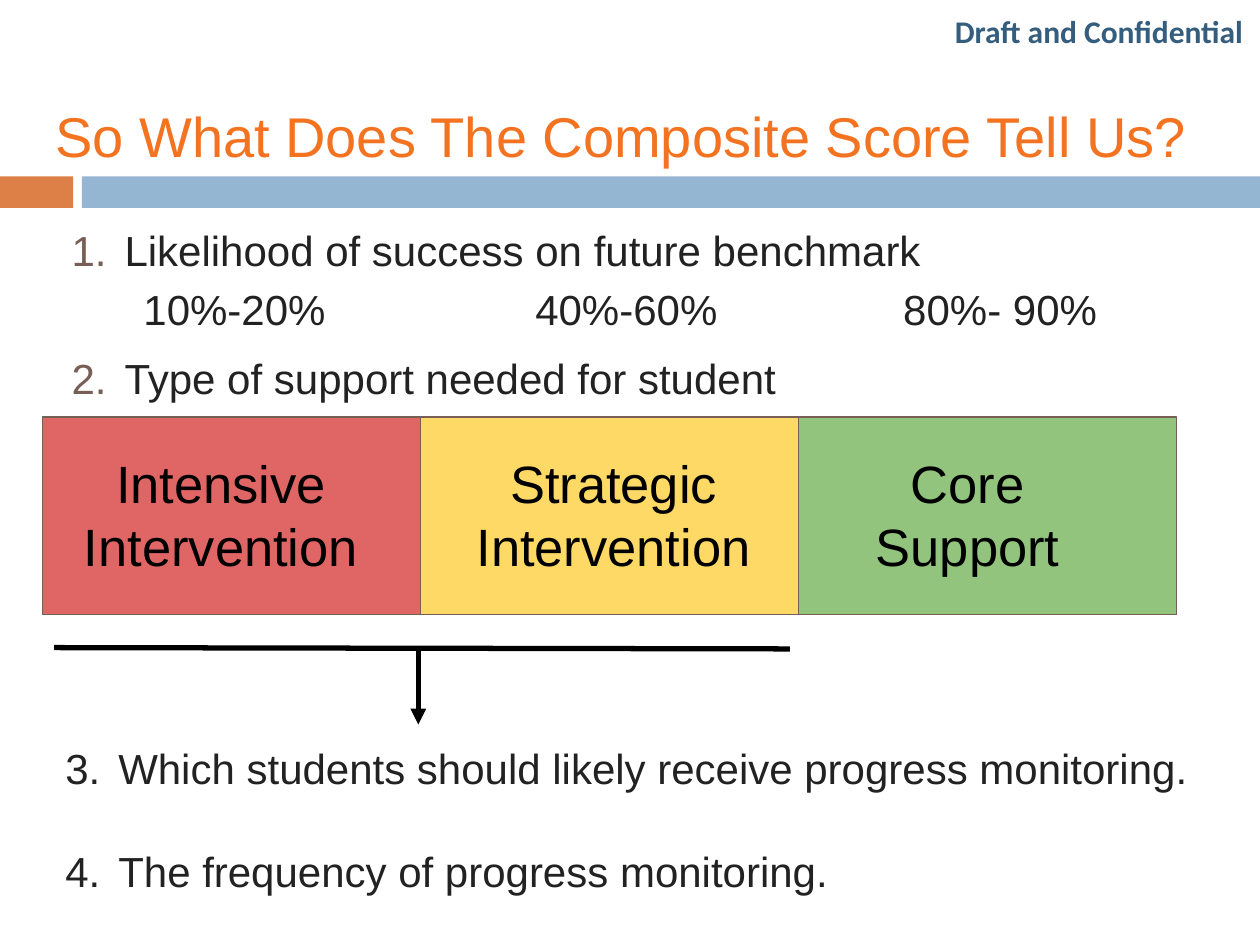
from pptx import Presentation
from pptx.util import Inches, Pt
from pptx.dml.color import RGBColor
from pptx.enum.shapes import MSO_SHAPE, MSO_CONNECTOR
from pptx.enum.text import PP_ALIGN, MSO_ANCHOR
from lxml.etree import SubElement
from pptx.oxml.ns import qn


def hue(code):
    return RGBColor.from_string(code)


def write(box, text, size, color, face="Arial", **form):
    frame = slide.shapes.add_textbox(*map(Inches, box)).text_frame
    frame.word_wrap = True
    for side in ("left", "right", "top", "bottom"):
        setattr(frame, f"margin_{side}", Inches(0.1))
    for row, line in enumerate(text.split("\n")):
        para = frame.paragraphs[0] if row == 0 else frame.add_paragraph()
        run = para.add_run()
        run.text = line
        look = {"name": face, "size": Pt(size), "bold": False}
        for key, value in {**look, **form}.items():
            setattr(run.font, key, value)
        run.font.color.rgb = hue(color)
    return frame


deck = Presentation()
deck.slide_width, deck.slide_height = Inches(10), Inches(7.5)
slide = deck.slides.add_slide(deck.slide_layouts[6])

blocks = [
    (0, 1.4, 0.58, 0.25, "DD8047", None),
    (0.65, 1.4, 9.35, 0.25, "94B6D2", None),
]
for col, fill in enumerate(("E06666", "FFD966", "93C47D")):
    blocks.append((0.34 + col * 3, 3.31, 3, 1.57, fill, "775F55"))
for left, top, width, height, fill, edge in blocks:
    rect = slide.shapes.add_shape(
        MSO_SHAPE.RECTANGLE, Inches(left), Inches(top), Inches(width), Inches(height))
    rect.shadow.inherit = False
    rect.fill.solid()
    rect.fill.fore_color.rgb = hue(fill)
    if edge:
        rect.line.color.rgb = hue(edge)
        rect.line.width = Pt(0.75)
    else:
        rect.line.fill.background()

note = write((7.48, 0.05, 2.52, 0.4), "Draft and Confidential", 18, "355D7E",
             "Calibri", bold=True)
note.word_wrap = False
note.margin_top = note.margin_bottom = Inches(0.05)

title = write((0.34, 0.66, 9.32, 0.83), "So What Does The Composite Score Tell Us?",
              32, "F37321")
title.vertical_anchor = MSO_ANCHOR.MIDDLE

items = [
    (0.39, 1.62, 8.92, "775F55",
     "Likelihood of success on future benchmark\n\t10%-20%\t40%-60%\t80%- 90%"),
    (0.39, 2.64, 8.92, "775F55", "Type of support needed for student"),
    (0.34, 5.73, 9.32, "222222",
     "Which students should likely receive progress monitoring."),
    (0.34, 6.55, 9.32, "222222", "The frequency of progress monitoring."),
]
for num, (left, top, width, color, text) in enumerate(items, 1):
    frame = write((left, top, width, 0.75), text, 24, "222222")
    for row, para in enumerate(frame.paragraphs):
        para.line_spacing = 1.15
        props = para._p.get_or_add_pPr()
        if row == 0:
            props.set("marL", str(Inches(0.5)))
            props.set("indent", str(Inches(-0.42)))
            tint = SubElement(props, qn("a:buClr"))
            SubElement(tint, qn("a:srgbClr"), val=color)
            SubElement(props, qn("a:buFont"), typeface="Arial")
            SubElement(props, qn("a:buAutoNum"), type="arabicPeriod", startAt=str(num))
        else:
            para.space_before = Pt(1)
            tabs = SubElement(props, qn("a:tabLst"))
            for stop in (0.65, 3.76, 6.68):
                SubElement(tabs, qn("a:tab"), pos=str(Inches(stop)), algn="l")

labels = [
    (0.54, 2.43, "Intensive Intervention"),
    (3.61, 2.52, "Strategic Intervention"),
    (6.55, 2.26, "Core Support"),
]
for left, width, text in labels:
    frame = write((left, 3.48, width, 1.23), text, 30, "000000")
    frame.paragraphs[0].alignment = PP_ALIGN.CENTER

for ends, head in (((0.43, 5.14, 6.27, 5.15), False), ((3.32, 5.15, 3.32, 5.75), True)):
    line = slide.shapes.add_connector(MSO_CONNECTOR.STRAIGHT, *map(Inches, ends))
    line.line.color.rgb = hue("000000")
    line.line.width = Pt(3)
    if head:
        SubElement(line.line._get_or_add_ln(), qn("a:tailEnd"), type="triangle")
    SubElement(line._element.spPr, qn("a:effectLst"))

deck.save("out.pptx")
